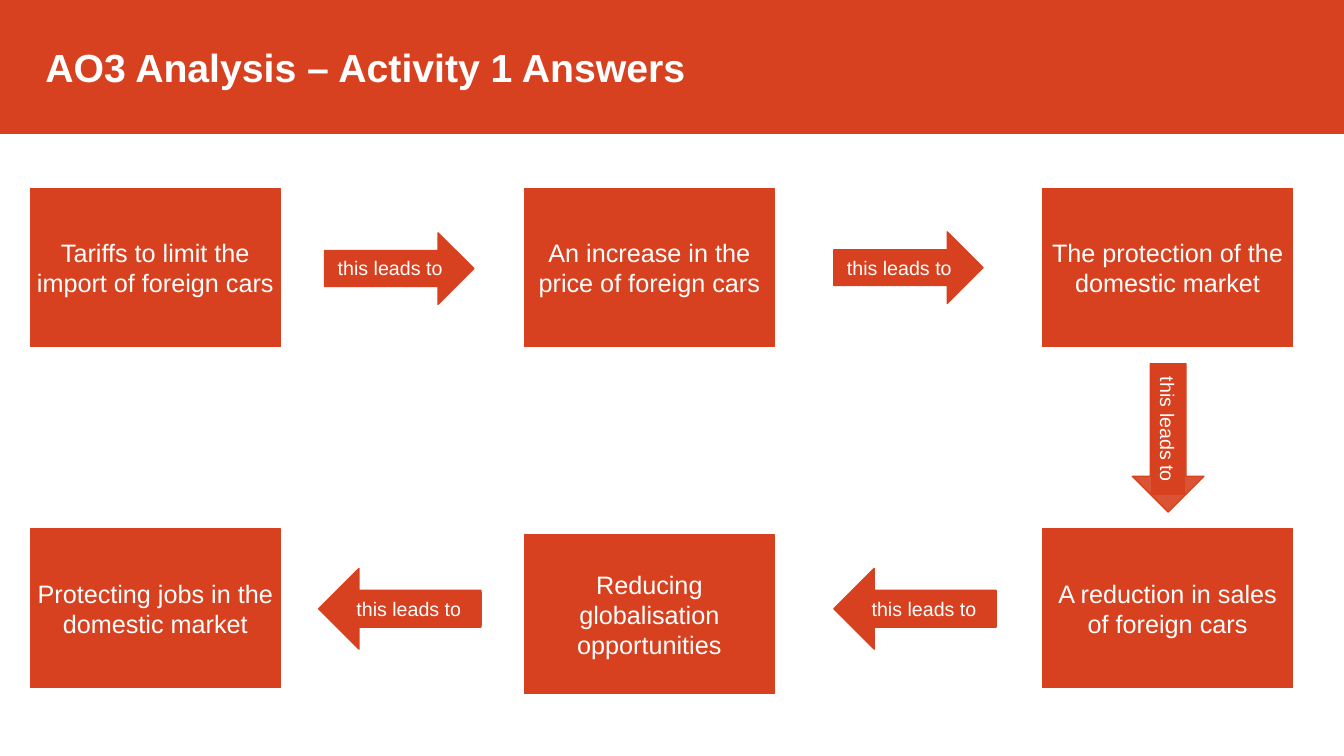
from lxml import etree
from pptx import Presentation
from pptx.dml.color import RGBColor
from pptx.enum import shapes, text
from pptx.oxml.ns import qn
from pptx.util import Inches, Pt

ORANGE = RGBColor(0xD7, 0x41, 0x20)
WHITE = RGBColor(0xFF, 0xFF, 0xFF)

SHAPE = shapes.MSO_SHAPE
SLIDE_WIDTH, SLIDE_HEIGHT = 13.33, 7.5
BOX_WIDTH, BOX_HEIGHT = 2.48, 1.57
COLUMNS = (0.3, 5.2, 10.34)
TOP_ROW, BOTTOM_ROW = 1.87, 5.25

# Left, top, label height, wording
STEPS = (
    (COLUMNS[0], TOP_ROW, 0.68, "Tariffs to limit the import of foreign cars"),
    (COLUMNS[1], TOP_ROW, 0.68, "An increase in the price of foreign cars"),
    (COLUMNS[2], TOP_ROW, 0.68, "The protection of the domestic market"),
    (COLUMNS[2], BOTTOM_ROW, 0.68, "A reduction in sales of foreign cars"),
    (COLUMNS[1], 5.31, 0.97, "Reducing globalisation opportunities"),
    (COLUMNS[0], BOTTOM_ROW, 0.68, "Protecting jobs in the domestic market"),
)


def add_block(group, kind, left, top, width, height, rotation=0):
    block = group.shapes.add_shape(
        kind, Inches(left), Inches(top), Inches(width), Inches(height))
    block.shadow.inherit = False
    block.fill.solid()
    block.fill.fore_color.rgb = ORANGE
    block.line.color.rgb = ORANGE
    block.line.width = Pt(1)
    block.rotation = rotation
    return block


def write(block, wording, size=18, bold=False, indent=0,
          align=text.PP_ALIGN.CENTER):
    frame = block.text_frame
    frame.word_wrap = True
    frame.auto_size = text.MSO_AUTO_SIZE.SHAPE_TO_FIT_TEXT
    frame.vertical_anchor = text.MSO_ANCHOR.MIDDLE
    frame.margin_left = frame.margin_right = Inches(0.05)
    frame.margin_top = frame.margin_bottom = Inches(0.05)
    para = frame.paragraphs[0]
    para.alignment = align
    if indent:
        para._p.get_or_add_pPr().set("indent", str(Inches(indent)))
    span = para.add_run()
    span.text = wording
    span.font.name = "Arial"
    span.font.size = Pt(size)
    span.font.bold = bold
    span.font.color.rgb = WHITE


def set_opacity(block, percent):
    color = block.fill._xPr.find(qn("a:solidFill"))[0]
    etree.SubElement(color, qn("a:alpha")).set("val", str(percent * 1000))


def add_title(page, wording):
    group = page.shapes.add_group_shape()
    add_block(group, SHAPE.RECTANGLE, 0, 0, SLIDE_WIDTH, 1.32)
    label = add_block(group, SHAPE.RECTANGLE, 0, 0.4, SLIDE_WIDTH, 0.53)
    write(label, wording, size=28, bold=True, indent=0.4,
          align=text.PP_ALIGN.LEFT)


def add_step(page, left, top, label_height, wording):
    group = page.shapes.add_group_shape()
    add_block(group, SHAPE.RECTANGLE, left, top, BOX_WIDTH, BOX_HEIGHT)
    label_top = top + (BOX_HEIGHT - label_height) / 2
    label = add_block(group, SHAPE.RECTANGLE, left, label_top,
                      BOX_WIDTH, label_height)
    write(label, wording)


def add_link(page, kind, arrow_area, label_area, shaft=0.5, rotation=0,
             opacity=100):
    """Add an arrow and its label; each area is left, top, width, height."""
    group = page.shapes.add_group_shape()
    arrow = add_block(group, kind, *arrow_area, rotation=rotation)
    arrow.adjustments[0] = shaft
    arrow.adjustments[1] = 0.5
    if opacity < 100:
        set_opacity(arrow, opacity)
    label = add_block(group, SHAPE.RECTANGLE, *label_area, rotation=rotation)
    write(label, "this leads to", size=14)


def add_right_link(page, left, top):
    add_link(page, SHAPE.RIGHT_ARROW, (left, top, 1.48, 0.71),
             (left, 2.5, 1.3, 0.32))


def add_down_link(page):
    add_link(page, SHAPE.RIGHT_ARROW, (10.85, 3.99, 1.47, 0.71),
             (10.94, 4.1, 1.29, 0.32), rotation=90, opacity=90)


def add_left_link(page, left):
    add_link(page, SHAPE.LEFT_ARROW, (left, 5.64, 1.61, 0.8),
             (left + 0.18, 5.88, 1.43, 0.32), shaft=0.455)


def main():
    deck = Presentation()
    deck.slide_width = Inches(SLIDE_WIDTH)
    deck.slide_height = Inches(SLIDE_HEIGHT)
    page = deck.slides.add_slide(deck.slide_layouts[6])

    add_title(page, "AO3 Analysis – Activity 1 Answers")
    links = (
        (add_right_link, 3.22, 2.31),
        (add_right_link, 8.27, 2.3),
        (add_down_link,),
        (add_left_link, 8.27),
        (add_left_link, 3.16),
    )
    add_step(page, *STEPS[0])
    for (add, *place), step in zip(links, STEPS[1:]):
        add(page, *place)
        add_step(page, *step)

    deck.save("out.pptx")


if __name__ == "__main__":
    main()
